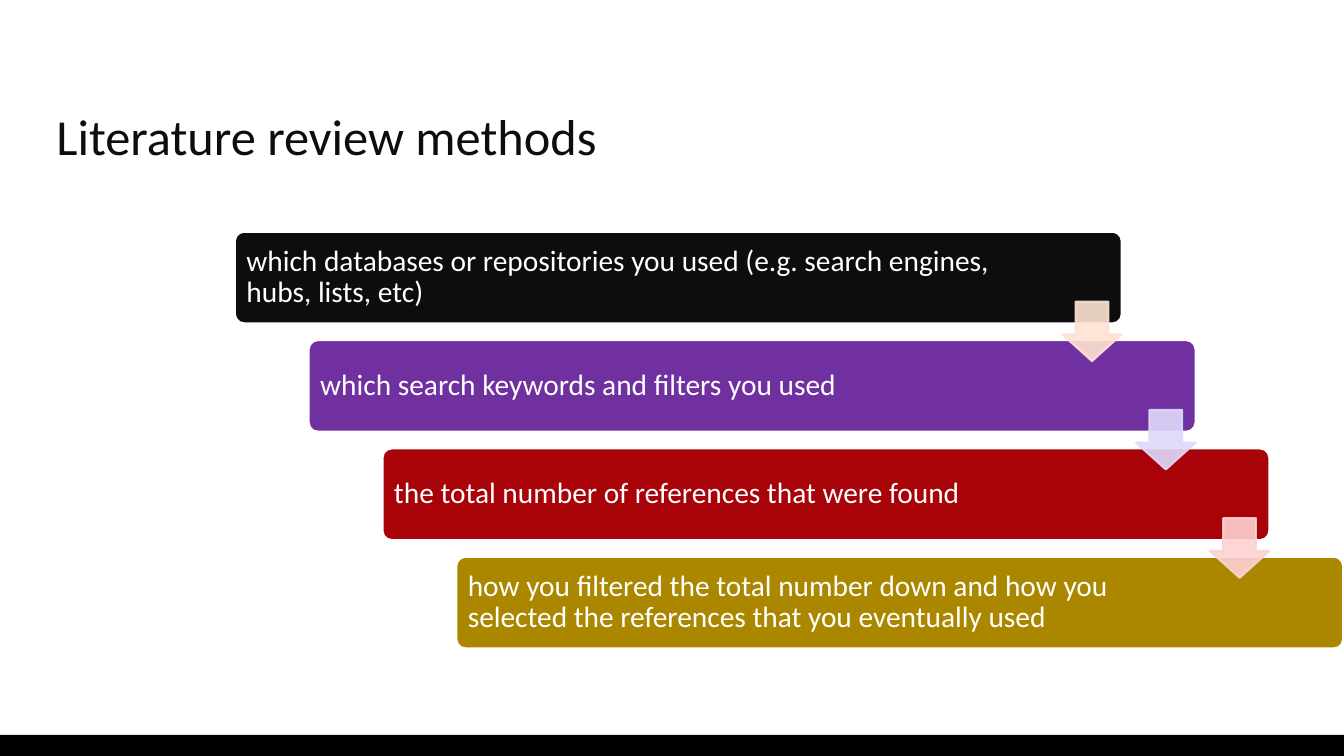
from dataclasses import dataclass

from lxml import etree
from pptx import Presentation
from pptx.dml.color import RGBColor
from pptx.enum import shapes as kinds, text as txt
from pptx.oxml.ns import qn
from pptx.util import Cm, Pt


@dataclass(frozen=True)
class Theme:
    font: str = "Calibri"
    title_size: int = 36
    step_size: int = 21
    outline: float = 1.5
    ink: str = "0D0D0D"
    paper: str = "FFFFFF"
    footer: str = "000000"
    steps: tuple = ("0D0D0D", "7030A0", "A80309", "AB8700")
    arrows: tuple = ("FEE3D4", "DFD9FB", "FED2D2")
    arrow_opacity: int = 90


THEME = Theme()
SLIDE_WIDTH, SLIDE_HEIGHT = 33.87, 19.05
SHIFT_X, SHIFT_Y = 1.86, 2.73
STEPS = (
    ("which databases or repositories you used (e.g. search engines, hubs, lists, etc)", 19.66),
    ("which search keywords and filters you used", 18.86),
    ("the total number of references that were found", 18.86),
    ("how you filtered the total number down and how you selected "
     "the references that you eventually used", 18.86),
)


def place(shape, left, top, width, height):
    shape.left, shape.top = Cm(left), Cm(top)
    shape.width, shape.height = Cm(width), Cm(height)


def write(frame, wording, size, color, inset_x, inset_y, anchor):
    """Fill a text frame with one left-aligned paragraph."""
    frame.word_wrap = True
    frame.auto_size = txt.MSO_AUTO_SIZE.NONE
    frame.vertical_anchor = anchor
    frame.margin_left = frame.margin_right = Cm(inset_x)
    frame.margin_top = frame.margin_bottom = Cm(inset_y)
    frame.text = wording
    paragraph = frame.paragraphs[0]
    paragraph.alignment = txt.PP_ALIGN.LEFT
    paragraph.line_spacing = 0.9
    paragraph.font.name = THEME.font
    paragraph.font.size = Pt(size)
    paragraph.font.color.rgb = RGBColor.from_string(color)


def add_block(parent, kind, box, fill, outline=None, adjustments=()):
    block = parent.add_shape(kind, *map(Cm, box))
    block.shadow.inherit = False
    block.fill.solid()
    block.fill.fore_color.rgb = RGBColor.from_string(fill)
    if outline:
        block.line.color.rgb = RGBColor.from_string(outline)
        block.line.width = Pt(THEME.outline)
    else:
        block.line.fill.background()
    for index, value in enumerate(adjustments):
        block.adjustments[index] = value
    return block


def add_title(slide, wording):
    title = slide.shapes.title
    place(title, 1.42, 2.69, 31.01, 2.01)
    write(title.text_frame, wording, THEME.title_size, THEME.ink,
          0, 0.13, txt.MSO_ANCHOR.TOP)


def add_step(parent, index, wording, label_width):
    left, top = 5.92 + index * SHIFT_X, 5.84 + index * SHIFT_Y
    add_block(parent, kinds.MSO_SHAPE.ROUNDED_RECTANGLE, (left, top, 22.35, 2.31),
              THEME.steps[index], THEME.paper, (0.1,))
    label = parent.add_textbox(Cm(left + 0.07), Cm(top + 0.06), Cm(label_width), Cm(2.18))
    write(label.text_frame, wording, THEME.step_size, THEME.paper,
          0.22, 0.22, txt.MSO_ANCHOR.MIDDLE)


def add_step_arrow(parent, index, color):
    """Add a translucent arrow that leads from one step to the next."""
    box = (26.77 + index * SHIFT_X, 7.6 + index * SHIFT_Y, 1.5, 1.5)
    arrow = add_block(parent, kinds.MSO_SHAPE.DOWN_ARROW, box, color, color, (0.55, 0.45))
    # Adjustments follow the preset's order: head length, then shaft width.
    for tint in arrow.element.spPr.iter(qn("a:srgbClr")):
        etree.SubElement(tint, qn("a:alpha"), val=str(THEME.arrow_opacity * 1000))


def main():
    prs = Presentation()
    prs.slide_width, prs.slide_height = Cm(SLIDE_WIDTH), Cm(SLIDE_HEIGHT)
    slide = prs.slides.add_slide(prs.slide_layouts.get_by_name("Title Only"))
    add_block(slide.shapes, kinds.MSO_SHAPE.RECTANGLE,
              (0, 18.52, SLIDE_WIDTH, 0.53), THEME.footer)
    add_title(slide, "Literature review methods")

    staircase = slide.shapes.add_group_shape().shapes
    for index, (wording, label_width) in enumerate(STEPS):
        add_step(staircase, index, wording, label_width)
    for index, color in enumerate(THEME.arrows):
        add_step_arrow(staircase, index, color)
    prs.save("out.pptx")


if __name__ == "__main__":
    main()
